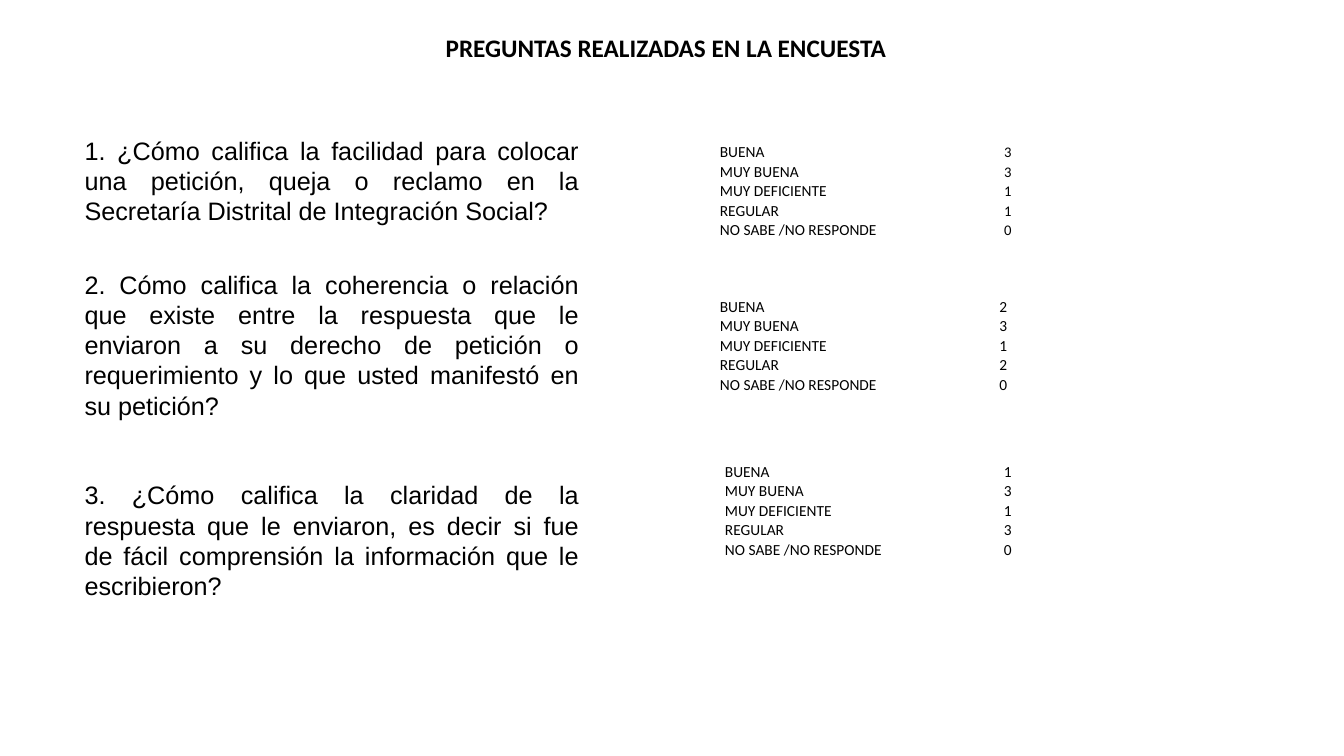
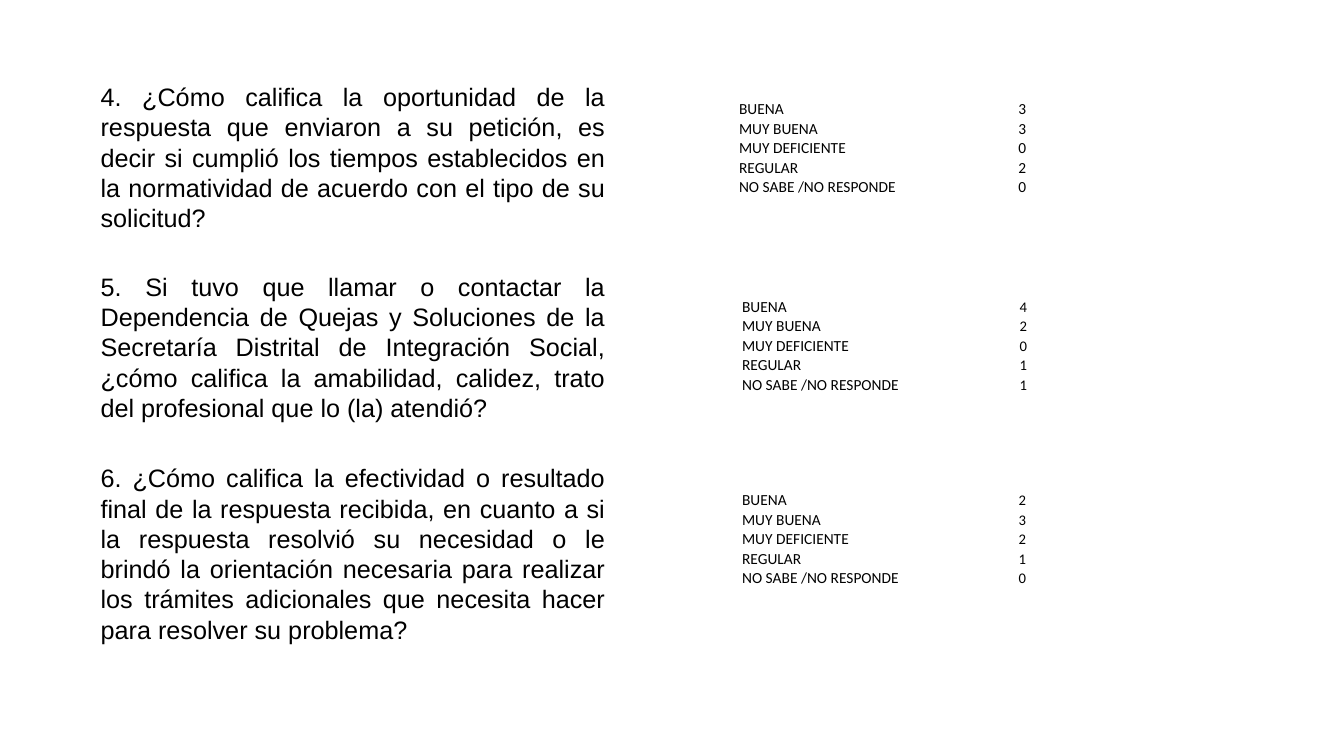
from pptx import Presentation
from pptx.dml.color import RGBColor
from pptx.enum.text import MSO_ANCHOR, MSO_AUTO_SIZE, PP_ALIGN
from pptx.oxml import parse_xml
from pptx.oxml.ns import nsdecls
from pptx.util import Emu, Pt

PX = 9144
BLACK, WHITE = "000000", "FFFFFF"
TITLE_ONLY, BLANK = 5, 6
TITLE = "PREGUNTAS REALIZADAS EN LA ENCUESTA"
RATINGS = ["BUENA", "MUY BUENA", "MUY DEFICIENTE", "REGULAR", "NO SABE /NO RESPONDE"]
TABLE_HEIGHT = 97

FIRST_QUESTIONS = [
    ("1. ¿Cómo califica la facilidad para colocar una petición, queja o reclamo en la "
     "Secretaría Distrital de Integración Social?", 129, 101),
    ("2. Cómo califica la coherencia o relación que existe entre la respuesta que le enviaron "
     "a su derecho de petición o requerimiento y lo que usted manifestó en su petición?", 262, 162),
    ("3. ¿Cómo califica la claridad de la respuesta que le enviaron, es decir si fue de fácil "
     "comprensión la información que le escribieron?", 471, 131),
]
FIRST_ANSWERS = [
    ([3, 3, 1, 1, 0], 713, 141, (210, 153), 10.5),
    ([2, 3, 1, 2, 0], 713, 294, (201, 162), 11),
    ([1, 3, 1, 3, 0], 718, 458, (205, 153), 11),
]
SECOND_QUESTIONS = [
    ("4. ¿Cómo califica la oportunidad de la respuesta que enviaron a su petición, es decir si "
     "cumplió los tiempos establecidos en la normatividad de acuerdo con el tipo de su "
     "solicitud?", 76, 162),
    ("5. Si tuvo que llamar o contactar la Dependencia de Quejas y Soluciones de la Secretaría "
     "Distrital de Integración Social, ¿cómo califica la amabilidad, calidez, trato del "
     "profesional que lo (la) atendió?", 264, 162),
    ("6. ¿Cómo califica la efectividad o resultado final de la respuesta recibida, en cuanto a "
     "si la respuesta resolvió su necesidad o le brindó la orientación necesaria para realizar "
     "los trámites adicionales que necesita hacer para resolver su problema?", 454, 192),
]
SECOND_ANSWERS = [
    ([3, 3, 0, 2, 0], 732, 98, (201, 162), 11),
    ([4, 2, 0, 1, 1], 735, 294, (199, 162), 10.5),
    ([2, 3, 2, 1, 0], 735, 486, (198, 162), 10.5),
]


def px(*lengths):
    """Turn px lengths into EMU."""
    return [Emu(length * PX) for length in lengths]


def color(value):
    """Turn a hex string into a colour."""
    return RGBColor.from_string(value)


def write(frame, text, font, size, align, bold=False):
    """Put one formatted paragraph into a text frame."""
    frame.text = text
    para = frame.paragraphs[0]
    para.alignment = align
    span = para.runs[0].font
    span.name, span.size, span.bold = font, Pt(size), bold
    span.color.rgb = color(BLACK)


def add_title(page, text):
    """Place and format the title placeholder."""
    title = page.shapes.title
    title.left, title.top, title.width, title.height = px(432, 27, 632, 40)
    frame = title.text_frame
    frame.auto_size = MSO_AUTO_SIZE.NONE
    frame.vertical_anchor = MSO_ANCHOR.TOP
    write(frame, text, "Calibri", 18, PP_ALIGN.LEFT, bold=True)


def add_question(page, text, left, top, width, height):
    """Add a justified question."""
    frame = page.shapes.add_textbox(*px(left, top, width, height)).text_frame
    frame.word_wrap = True
    write(frame, text, "Arial", 18, PP_ALIGN.JUSTIFY)


def format_cell(cell):
    """Give a cell its white fill and borders, narrow margins and bottom anchor."""
    cell.margin_left, cell.margin_top, cell.margin_right, cell.margin_bottom = px(1, 1, 1, 0)
    cell.vertical_anchor = MSO_ANCHOR.BOTTOM
    cell.fill.solid()
    cell.fill.fore_color.rgb = color(WHITE)
    properties = cell._tc.get_or_add_tcPr()
    for index, side in enumerate("LRTB"):
        properties.insert(index, parse_xml(
            f'<a:ln{side} {nsdecls("a")} w="{Pt(1)}"><a:solidFill>'
            f'<a:srgbClr val="{WHITE}"/></a:solidFill></a:ln{side}>'))


def add_answers(page, counts, left, top, widths, count_size):
    """Add a table with the number of answers for each rating."""
    frame = page.shapes.add_table(len(RATINGS), 2, *px(left, top, sum(widths), TABLE_HEIGHT))
    table = frame.table
    table.first_row = table.horz_banding = False
    for column, width in zip(table.columns, px(*widths)):
        column.width = width
    for row, rating, count in zip(table.rows, RATINGS, counts):
        label_cell, count_cell = row.cells
        write(label_cell.text_frame, rating, "Calibri", 11, PP_ALIGN.LEFT)
        write(count_cell.text_frame, str(count), "Calibri", count_size, PP_ALIGN.CENTER)
        format_cell(label_cell)
        format_cell(count_cell)


def add_survey(page, questions, answers, left, width):
    """Fill a page with questions on the left and answer tables on the right."""
    for text, top, height in questions:
        add_question(page, text, left, top, width, height)
    for answer in answers:
        add_answers(page, *answer)


def main():
    """Build and save the deck."""
    deck = Presentation()
    deck.slide_width, deck.slide_height = px(1333, 750)
    page = deck.slides.add_slide(deck.slide_layouts[TITLE_ONLY])
    add_title(page, TITLE)
    add_survey(page, FIRST_QUESTIONS, FIRST_ANSWERS, 74, 510)
    page = deck.slides.add_slide(deck.slide_layouts[BLANK])
    add_survey(page, SECOND_QUESTIONS, SECOND_ANSWERS, 90, 520)
    deck.save("out.pptx")


if __name__ == "__main__":
    main()
